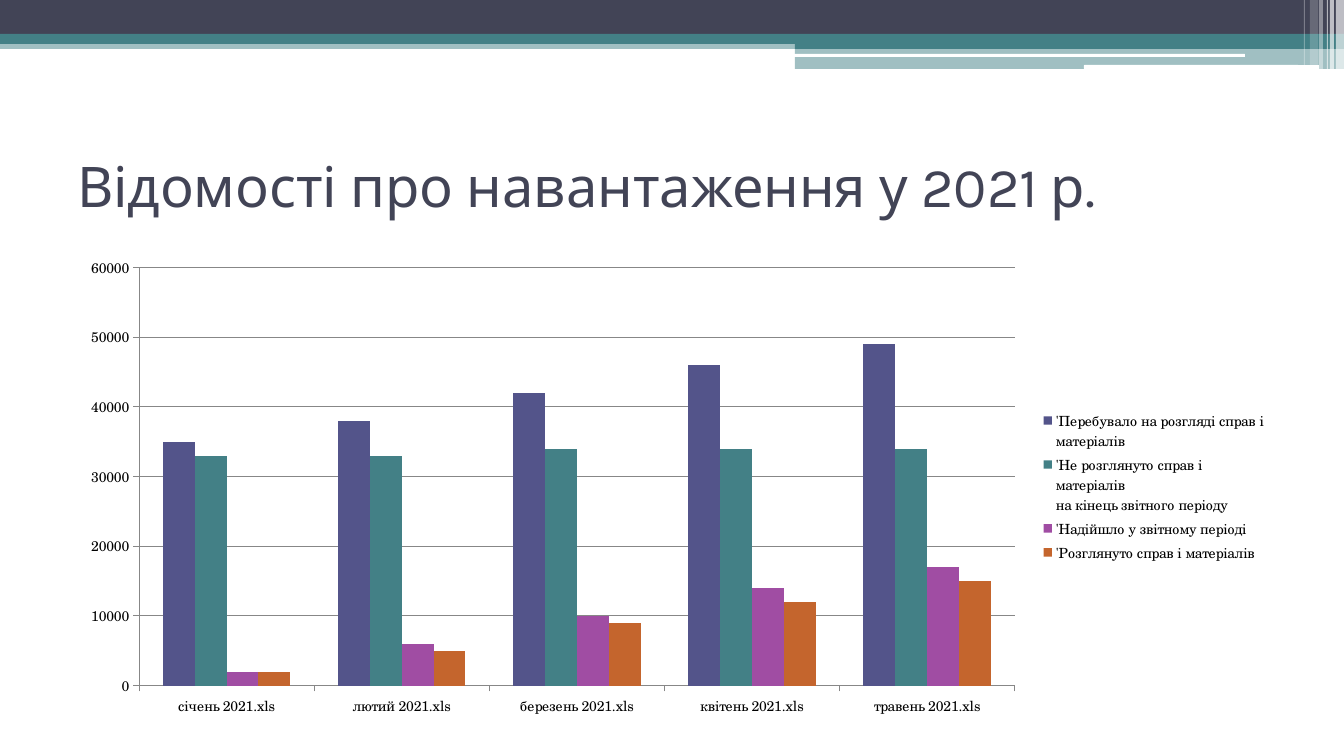
from lxml import etree
from pptx import Presentation
from pptx import util as u
from pptx.chart.data import CategoryChartData
from pptx.dml.color import RGBColor
from pptx.enum import chart as ch, shapes, text
from pptx.oxml.ns import qn

PX = 9144000 / 1008
THEME = {
    "dark": "424456", "teal": "438086", "white": "FFFFFF",
    "black": "000000", "grid": "878787",
    "title_font": "Karla", "chart_font": "TeX Gyre Schola",
    "title_size": 40, "chart_size": 10,
}


def px(*lengths):
    return [u.Emu(round(n * PX)) for n in lengths]


def add_band(box, color, alpha=100, kind=shapes.MSO_SHAPE.RECTANGLE):
    """Add a borderless shape with an opacity given in percent."""
    sp = slide.shapes.add_shape(kind, *px(*box))
    sp.shadow.inherit = False
    sp.line.fill.background()
    sp.fill.solid()
    sp.fill.fore_color.rgb = RGBColor.from_string(THEME[color])
    if alpha < 100:
        clr = sp.fill._xPr.find(".//" + qn("a:srgbClr"))
        etree.SubElement(clr, qn("a:alpha"), val=str(alpha * 1000))


prs = Presentation()
prs.slide_width, prs.slide_height = px(1344, 756)
slide = prs.slides.add_slide(prs.slide_layouts[5])

# Header bands
for box, color, alpha in [
    ((0, 40, 1344, 9), "teal", 50),
    ((0, 0, 1344, 34), "dark", 100),
    ((0, 34, 1344, 10), "teal", 100),
    ((795, 39, 549, 10), "teal", 100),
    ((795, 49, 549, 20), "teal", 50),
]:
    add_band(box, color, alpha)
for box in [(794, 54, 451, 3), (1084, 65, 235, 4)]:
    add_band(box, "white", kind=shapes.MSO_SHAPE.ROUNDED_RECTANGLE)

# Vertical stripes at the right edge
for left, width, height, alpha in [
    (1336, 8, 69, 65), (1330, 4, 69, 65), (1327, 1, 69, 60),
    (1319, 4, 69, 40), (1310, 8, 65, 20), (1304, 1, 65, 30),
]:
    add_band((left, 0, width, height), "white", alpha)

# Title
title = slide.shapes.title
title.left, title.top, title.width, title.height = px(67, 126, 1210, 118)
tf = title.text_frame
tf.word_wrap = True
tf.auto_size = text.MSO_AUTO_SIZE.NONE
tf.vertical_anchor = text.MSO_ANCHOR.MIDDLE
p = tf.paragraphs[0]
p.alignment = text.PP_ALIGN.LEFT
r = p.add_run()
r.text = "Відомості про навантаження у 2021 р."
r.font.name = THEME["title_font"]
r.font.size = u.Pt(THEME["title_size"])
r.font.color.rgb = RGBColor.from_string(THEME["dark"])

# Workload chart
workload = [
    ("'Перебувало на розгляді справ і\nматеріалів", "53548A",
     (35000, 38000, 42000, 46000, 49000)),
    ("'Не розглянуто справ і\nматеріалів\nна кінець звітного періоду", "438086",
     (33000, 33000, 34000, 34000, 34000)),
    ("'Надійшло у звітному періоді", "A04DA3",
     (2000, 6000, 10000, 14000, 17000)),
    ("'Розглянуто справ і матеріалів", "C4652D",
     (2000, 5000, 9000, 12000, 15000)),
]
data = CategoryChartData()
data.categories = [f"{month} 2021.xls" for month in
                   ("січень", "лютий", "березень", "квітень", "травень")]
for name, _, values in workload:
    data.add_series(name, values)
chart = slide.shapes.add_chart(
    ch.XL_CHART_TYPE.COLUMN_CLUSTERED, *px(67, 248, 1210, 477), data).chart
chart.has_title = False
chart.font.name = THEME["chart_font"]
chart.font.size = u.Pt(THEME["chart_size"])
chart.font.color.rgb = RGBColor.from_string(THEME["black"])
chart.has_legend = True
chart.legend.position = ch.XL_LEGEND_POSITION.RIGHT
chart.legend.include_in_layout = False

plot = chart.plots[0]
plot.gap_width = 150
plot.overlap = 0
plot.vary_by_categories = False
for series, (_, color, _) in zip(plot.series, workload):
    series.format.fill.solid()
    series.format.fill.fore_color.rgb = RGBColor.from_string(color)

val_axis = chart.value_axis
val_axis.minimum_scale, val_axis.maximum_scale = 0, 60000
val_axis.major_unit = 10000
val_axis.has_major_gridlines = True
for axis in (chart.category_axis, val_axis):
    axis.major_tick_mark = ch.XL_TICK_MARK.OUTSIDE
    axis.minor_tick_mark = ch.XL_TICK_MARK.NONE
for part in (chart.category_axis, val_axis, val_axis.major_gridlines):
    part.format.line.color.rgb = RGBColor.from_string(THEME["grid"])
    part.format.line.width = u.Pt(0.75)

prs.save("out.pptx")
